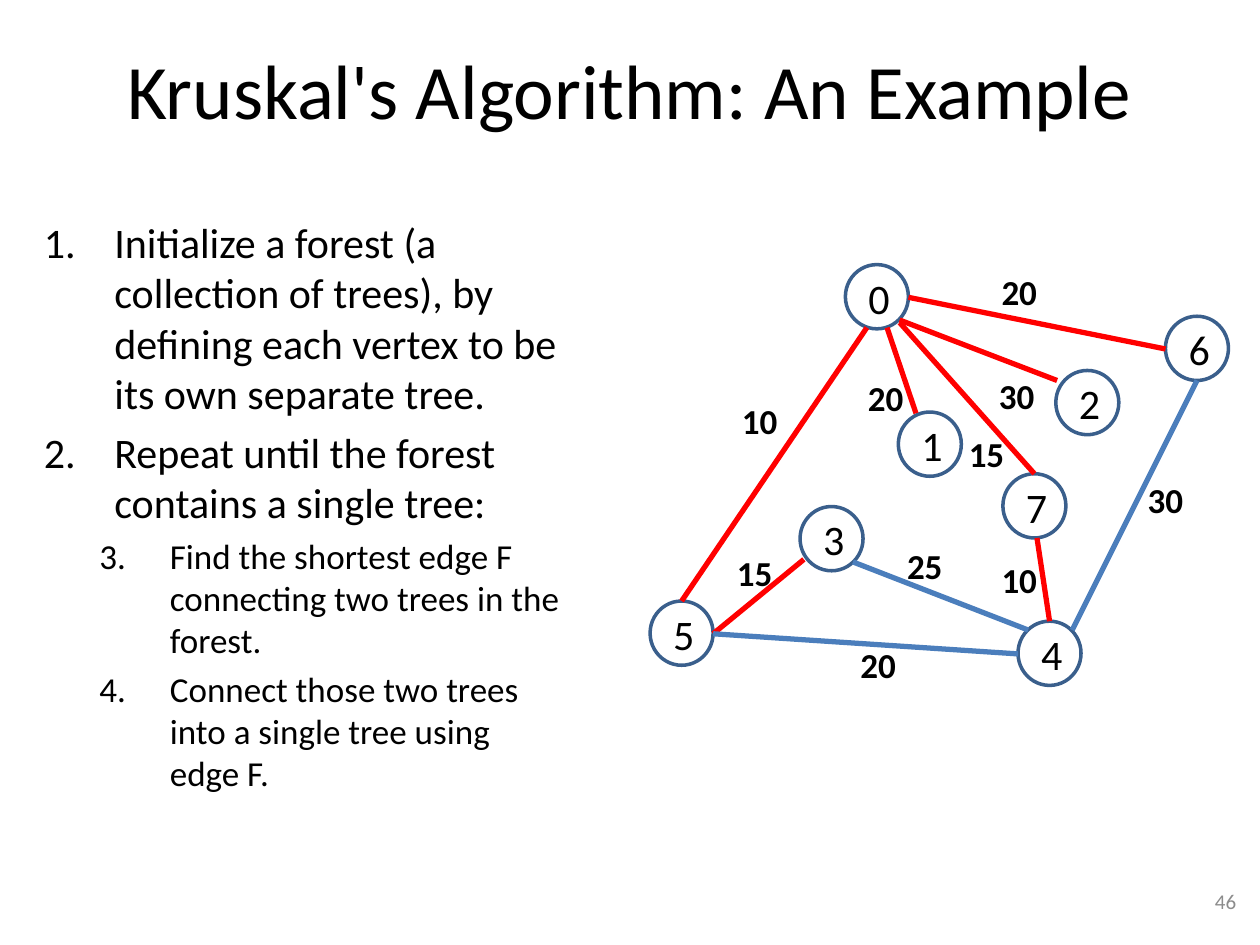
from lxml import etree
from pptx import Presentation
from pptx.dml.color import RGBColor
from pptx.enum.shapes import MSO_CONNECTOR as Connector, MSO_SHAPE as Shape
from pptx.enum.text import MSO_ANCHOR as Anchor, PP_ALIGN as Align
from pptx.oxml.ns import qn
from pptx.util import Inches, Pt

FONT = "Calibri"
COLORS = {
    "text": "000000",
    "number": "8C8C8C",
    "outline": "3A5F8C",
    "tree": "FF0000",
    "unused": "4B7EBC",
}
NODE_WIDTH, NODE_HEIGHT = 0.5, 0.51
TOP = 0

STEPS = [
    (0, "Initialize a forest (a collection of trees), by defining each vertex to be its own separate tree."),
    (0, "Repeat until the forest contains a single tree:"),
    (1, "Find the shortest edge F connecting two trees in the forest."),
    (1, "Connect those two trees into a single tree using edge F."),
]
NODES = {
    0: (6.71, 2.1),
    1: (7.13, 3.27),
    7: (7.96, 3.76),
    2: (8.38, 2.94),
    5: (5.16, 4.77),
    3: (6.35, 4.02),
    4: (8.08, 4.93),
    6: (9.25, 2.51),
}
EDGES = [
    ((7.21, 2.36), (9.25, 2.77), "tree", None),
    ((7.14, 2.54), (8.39, 3.02), "tree", None),
    ((7.04, 2.6), (7.27, 3.28), "tree", None),
    ((6.88, 2.6), (5.41, 4.77), "tree", 5),
    ((7.14, 2.56), (8.21, 3.76), "tree", 7),
    ((5.66, 5.03), (6.38, 4.44), "tree", None),
    ((5.66, 5.03), (8.08, 5.19), "unused", None),
    ((6.77, 4.46), (8.16, 5), "unused", None),
    ((8.23, 4.27), (8.33, 4.93), "tree", 4),
    ((9.5, 3.02), (8.51, 5), "unused", None),
]
WEIGHTS = [
    (7.85, 4.38, 10),
    (5.79, 3.12, 10),
    (7.85, 2.1, 20),
    (7.83, 2.92, 30),
    (6.79, 2.94, 20),
    (7.59, 3.38, 15),
    (9.01, 3.75, 30),
    (6.73, 5.06, 20),
    (5.75, 4.33, 15),
    (7.1, 4.27, 25),
]


def color(name):
    return RGBColor.from_string(COLORS[name])


def style(paragraph, size, bold=False, fill="text"):
    for run in paragraph.runs:
        run.font.name = FONT
        run.font.size = Pt(size)
        run.font.bold = bold
        run.font.color.rgb = color(fill)


def add_text(slide, box, text, size, align=Align.LEFT, anchor=Anchor.TOP,
             wrap=True, bold=False, fill="text"):
    shape = slide.shapes.add_textbox(*(Inches(value) for value in box))
    text_frame = shape.text_frame
    text_frame.text = text
    text_frame.word_wrap = wrap
    text_frame.vertical_anchor = anchor
    for paragraph in text_frame.paragraphs:
        paragraph.alignment = align
        style(paragraph, size, bold, fill)
    return shape


def number_paragraph(paragraph, level):
    properties = paragraph._p.get_or_add_pPr()
    properties.set("marL", str(Inches((0.56, 1)[level])))
    properties.set("indent", str(Inches(-0.56)))
    etree.SubElement(properties, qn("a:buFont"), typeface="+mj-lt")
    bullet = etree.SubElement(properties, qn("a:buAutoNum"), type="arabicPeriod")
    if level:
        bullet.set("startAt", "3")


def add_steps(slide):
    text = "\n".join(step for _, step in STEPS)
    shape = add_text(slide, (0.25, 1.67, 4.33, 5.33), text, 24)
    for paragraph, (level, _) in zip(shape.text_frame.paragraphs, STEPS):
        size = (24, 20)[level]
        paragraph.level = level
        paragraph.space_before = Pt(0.2 * size)
        style(paragraph, size)
        number_paragraph(paragraph, level)


def add_node(slide, label, left, top):
    circle = slide.shapes.add_shape(
        Shape.OVAL, Inches(left), Inches(top), Inches(NODE_WIDTH), Inches(NODE_HEIGHT))
    circle.shadow.inherit = False
    circle.fill.background()
    circle.line.color.rgb = color("outline")
    circle.line.width = Pt(2)
    add_text(slide, (left, top + 0.01, 0.46, 0.5), f" {label}", 24, Align.CENTER)
    return circle


def add_edge(slide, start, end, kind, target):
    edge = slide.shapes.add_connector(
        Connector.STRAIGHT, *(Inches(value) for value in start + end))
    edge.line.color.rgb = color(kind)
    edge.line.width = Pt(3)
    etree.SubElement(edge._element.spPr, qn("a:effectLst"))
    if target is not None:
        edge.end_connect(target, TOP)


def main():
    presentation = Presentation()
    presentation.slide_width = Inches(10)
    presentation.slide_height = Inches(7.5)
    slide = presentation.slides.add_slide(presentation.slide_layouts[6])

    add_text(slide, (0.5, 0.08, 9, 1.25), "Kruskal's Algorithm: An Example", 44,
             Align.CENTER, Anchor.MIDDLE)
    add_steps(slide)
    add_text(slide, (7.58, 6.95, 2.33, 0.4), "46", 12, Align.RIGHT, Anchor.MIDDLE,
             fill="number")

    circles = {label: add_node(slide, label, *place) for label, place in NODES.items()}
    for start, end, kind, target in EDGES:
        add_edge(slide, start, end, kind, circles.get(target))
    for left, top, weight in WEIGHTS:
        add_text(slide, (left, top, 0.49, 0.44), str(weight), 20, wrap=False, bold=True)

    presentation.save("out.pptx")


if __name__ == "__main__":
    main()
